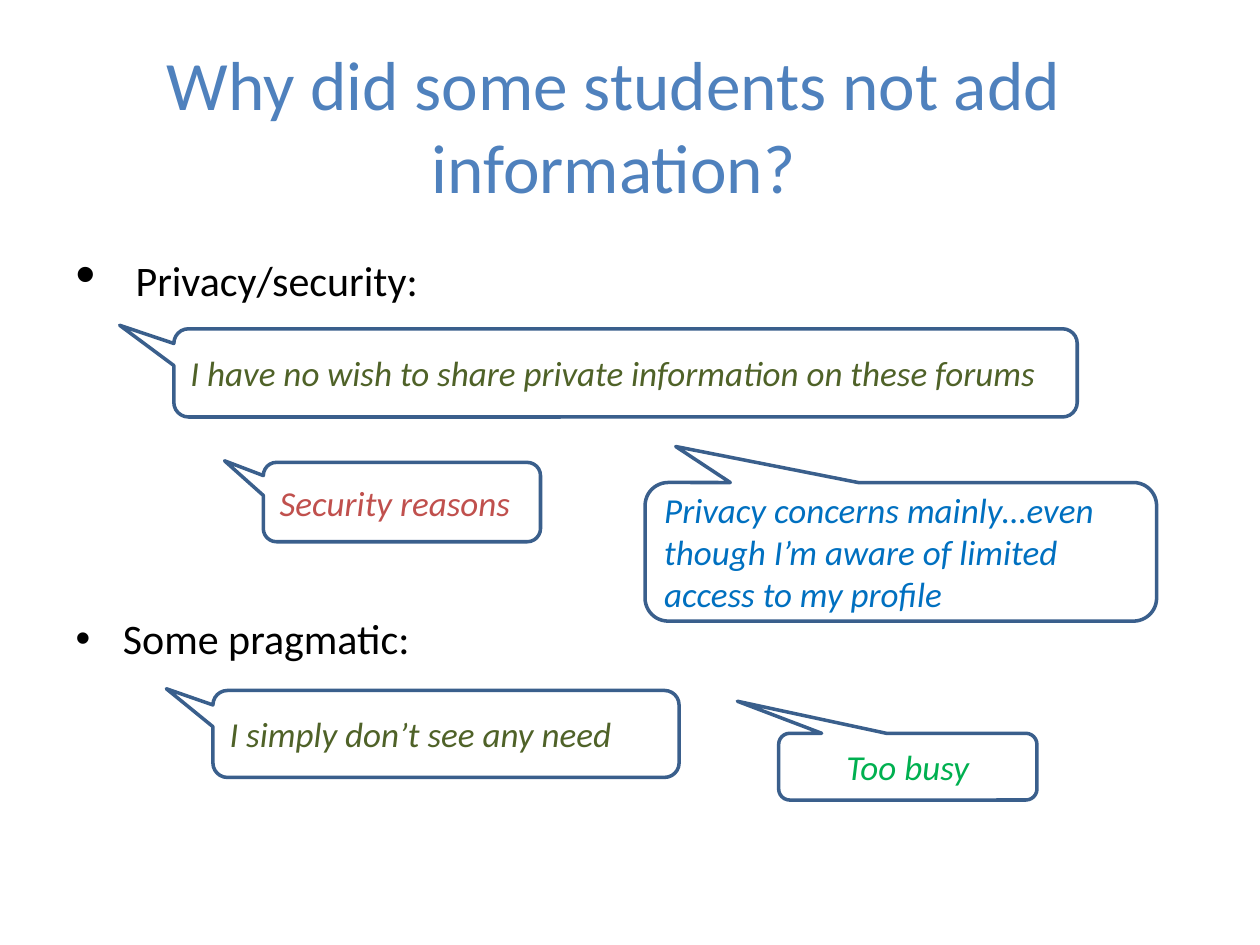
from dataclasses import dataclass

from pptx import Presentation
from pptx.dml.color import RGBColor
from pptx.enum.shapes import MSO_SHAPE
from pptx.enum.text import MSO_ANCHOR, MSO_AUTO_SIZE, PP_ALIGN
from pptx.util import Inches, Pt


@dataclass(frozen=True)
class Theme:
    font: str = "Calibri"
    title: str = "4F81BD"
    text: str = "000000"
    edge: str = "3A5F8C"
    olive: str = "4F6228"
    red: str = "C0504D"
    blue: str = "0070C0"
    green: str = "00B050"
    head_size: float = 39.6
    lead_size: float = 32
    body_size: float = 24
    quote_size: float = 20


class Deck:
    """Holds the theme and the slide being filled."""

    def __init__(self, theme, slide):
        self.theme = theme
        self.slide = slide

    def add_text(self, para, text, size, color, italic=False):
        run = para.add_run()
        run.text = text
        font = run.font
        font.name = self.theme.font
        font.size = Pt(size)
        font.italic = italic
        font.color.rgb = RGBColor.from_string(color)

    def place(self, shape, box):
        shape.left, shape.top, shape.width, shape.height = map(Inches, box)
        shape.text_frame.auto_size = MSO_AUTO_SIZE.NONE
        return shape.text_frame

    def title(self, box, text):
        frame = self.place(self.slide.shapes.title, box)
        frame.vertical_anchor = MSO_ANCHOR.MIDDLE
        para = frame.paragraphs[0]
        para.alignment = PP_ALIGN.CENTER
        self.add_text(para, text, self.theme.head_size, self.theme.title)

    def body(self, box, items, gap):
        """Each item is a list of (text, size) runs; gap is the points between items."""
        frame = self.place(self.slide.placeholders[1], box)
        for index, runs in enumerate(items):
            para = frame.add_paragraph() if index else frame.paragraphs[0]
            para.space_before = Pt(gap if index else 0)
            for text, size in runs:
                self.add_text(para, text, size, self.theme.text)

    def quote(self, box, tip, text, color, align=PP_ALIGN.LEFT):
        """Tip is the pointer's offset from the centre, as shares of width and height."""
        shape = self.slide.shapes.add_shape(
            MSO_SHAPE.ROUNDED_RECTANGULAR_CALLOUT, *map(Inches, box))
        shape.adjustments[0], shape.adjustments[1] = tip
        shape.shadow.inherit = False
        shape.fill.background()
        shape.line.color.rgb = RGBColor.from_string(self.theme.edge)
        shape.line.width = Pt(2)
        frame = shape.text_frame
        frame.word_wrap = True
        frame.vertical_anchor = MSO_ANCHOR.MIDDLE
        para = frame.paragraphs[0]
        para.alignment = align
        self.add_text(para, text, self.theme.quote_size, color, italic=True)


def main():
    show = Presentation()
    show.slide_width, show.slide_height = Inches(10), Inches(7.5)
    theme = Theme()
    deck = Deck(theme, show.slides.add_slide(show.slide_layouts[1]))

    deck.title((0.33, 0.36, 9.08, 1.25),
               "Why did some students not add information?")
    deck.body((0.5, 1.86, 9, 5.2), [
        [(" ", theme.lead_size), ("Privacy/security:", theme.body_size)],
        [("Some pragmatic:", theme.body_size)],
    ], gap=174)

    deck.quote((2.09, 3.67, 2.2, 0.63), (-0.64, -0.52),
               "Security reasons", theme.red)
    deck.quote((5.12, 3.83, 4.06, 1.1), (-0.44, -0.76),
               "Privacy concerns mainly…even though I’m aware of limited "
               "access to my profile", theme.blue)
    deck.quote((1.38, 2.61, 7.17, 0.7), (-0.56, -0.54),
               "I have no wish to share private information on these forums",
               theme.olive)
    deck.quote((6.18, 5.82, 2.05, 0.53), (-0.66, -0.98),
               "Too busy", theme.green, PP_ALIGN.CENTER)
    deck.quote((1.69, 5.48, 3.7, 0.69), (-0.6, -0.52),
               "I simply don’t see any need", theme.olive)

    show.save("out.pptx")


if __name__ == "__main__":
    main()
